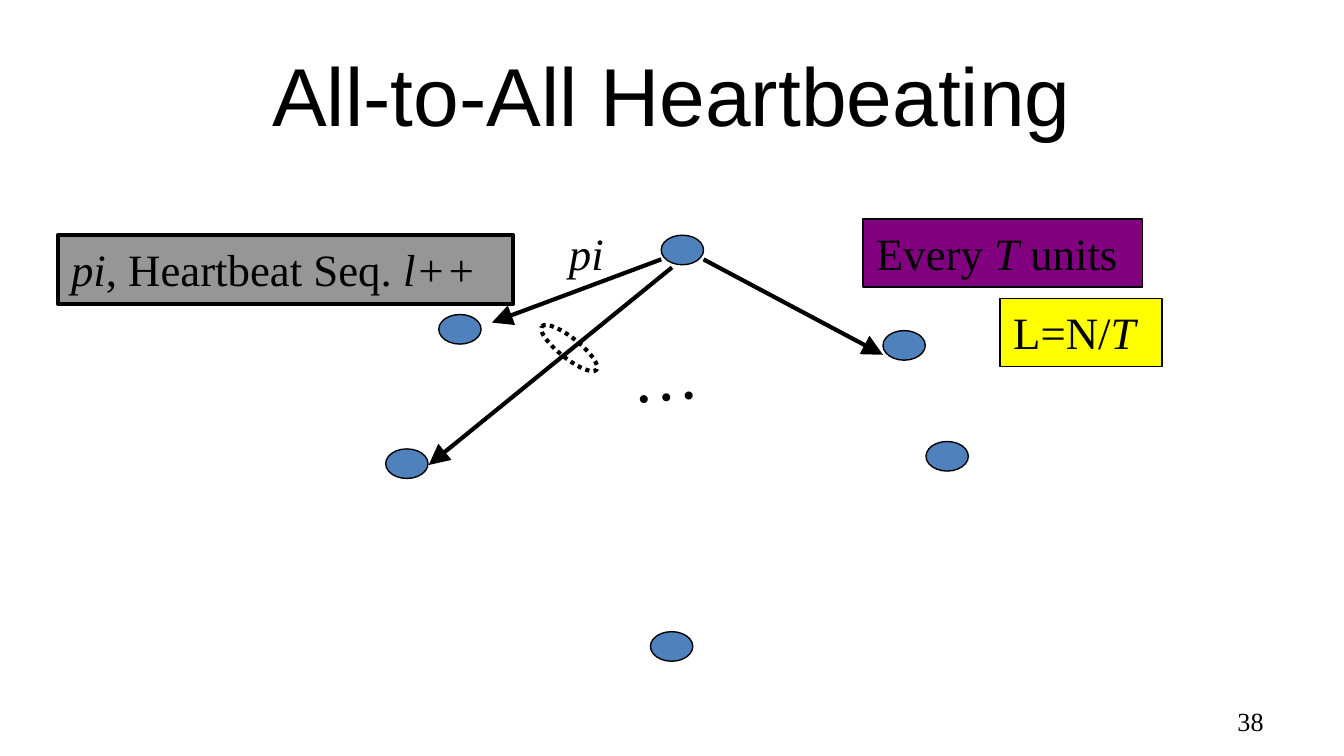
import pptx
import pptx.dml.color
import pptx.enum.dml
import pptx.enum.shapes
import pptx.enum.text
import pptx.oxml
import pptx.oxml.ns
import pptx.util

PX = 4572
SERIF = "Times New Roman"
ALIGN = pptx.enum.text.PP_ALIGN
ANCHOR = pptx.enum.text.MSO_ANCHOR
SHAPE = pptx.enum.shapes.MSO_SHAPE


def emu(*lengths):
    """Turn px lengths into EMU."""
    return [pptx.util.Emu(length * PX) for length in lengths]


def color(value):
    """Turn a hex string into a colour."""
    return pptx.dml.color.RGBColor.from_string(value)


def set_line(line, width):
    """Give a line or outline black ink and a width in points."""
    line.color.rgb = color("000000")
    line.width = pptx.util.Pt(width)


def set_font(para, name, size):
    """Set the black font of a paragraph."""
    para.font.name = name
    para.font.size = pptx.util.Pt(size)
    para.font.color.rgb = color("000000")


def add_ellipse(page, box, line_width, fill=None):
    """Add an outlined ellipse, hollow unless a fill is given."""
    ellipse = page.shapes.add_shape(SHAPE.OVAL, *emu(*box))
    ellipse.shadow.inherit = False
    if fill:
        ellipse.fill.solid()
        ellipse.fill.fore_color.rgb = color(fill)
    else:
        ellipse.fill.background()
    set_line(ellipse.line, line_width)
    return ellipse


def add_arrow(page, start, end):
    """Add an arrow that points at its end."""
    arrow = page.shapes.add_connector(
        pptx.enum.shapes.MSO_CONNECTOR.STRAIGHT, *emu(*start, *end))
    set_line(arrow.line, 2.25)
    namespace = pptx.oxml.ns.nsdecls("a")
    properties = arrow.element.spPr
    properties.find(pptx.oxml.ns.qn("a:ln")).append(pptx.oxml.parse_xml(
        f'<a:tailEnd {namespace} type="triangle" w="lg" len="lg"/>'))
    properties.append(pptx.oxml.parse_xml(f'<a:effectLst {namespace}/>'))


def add_label(page, box, spans, size=24, fill=None, line_width=0.75):
    """Add serif text from (text, italic) spans, framed if a fill is given."""
    if fill:
        label = page.shapes.add_shape(SHAPE.RECTANGLE, *emu(*box))
        label.shadow.inherit = False
        label.fill.solid()
        label.fill.fore_color.rgb = color(fill)
        set_line(label.line, line_width)
    else:
        label = page.shapes.add_textbox(*emu(*box))
    frame = label.text_frame
    frame.word_wrap = True
    frame.vertical_anchor = ANCHOR.TOP
    para = frame.paragraphs[0]
    para.alignment = ALIGN.LEFT
    set_font(para, SERIF, size)
    for text, italic in spans:
        span = para.add_run()
        span.text = text
        span.font.italic = italic
    return label


def build_title(page, box, text):
    """Place the title in its placeholder."""
    title = page.shapes.title
    title.left, title.top, title.width, title.height = emu(*box)
    title.text_frame.text = text
    title.text_frame.vertical_anchor = ANCHOR.MIDDLE
    para = title.text_frame.paragraphs[0]
    para.alignment = ALIGN.CENTER
    set_font(para, "Arial", 44)


def build_ring(page, box):
    """Draw the ring of processes and the heartbeats sent from the top one."""
    left, top, _, _ = box
    for x, y in [(740, 142), (79, 118), (0, 318), (804, 307), (410, 0), (394, 590)]:
        add_ellipse(page, (left + x, top + y, 63, 44), 0.75, "4F81BD")
    for start, end in [((426, 48), (64, 342)), ((410, 36), (158, 130)),
                       ((473, 36), (740, 178))]:
        add_arrow(page, (left + start[0], top + start[1]),
                  (left + end[0], top + end[1]))
    bundle = add_ellipse(page, (left + 221, top + 153, 104, 30), 2.25)
    bundle.line.dash_style = pptx.enum.dml.MSO_LINE.ROUND_DOT
    bundle.rotation = 38.5
    dots = add_label(page, (left + 346, top + 136, 142, 142), [("…", False)], 36)
    dots.rotation = 355.4
    add_label(page, (left + 253, top - 24, 122, 102), [("pi", True)])


def build_notes(page, box):
    """Place the message, period and load labels."""
    left, top, _, _ = box
    add_label(page, (left, top + 24, 678, 102),
              [("pi", True), (", Heartbeat Seq. ", False), ("l++", True)],
              fill="969696", line_width=2.25)
    add_label(page, (left + 1198, top, 416, 101),
              [("Every ", False), ("T", True), (" units", False)], fill="800080")
    add_label(page, (left + 1402, top + 118, 241, 101),
              [("L=N/", False), ("T", True)], fill="FFFF00")


def build_page_number(page, box, number):
    """Place the page number at the right of its box."""
    label = add_label(page, box, [(number, False)], 14)
    label.text_frame.vertical_anchor = ANCHOR.MIDDLE
    label.text_frame.paragraphs[0].alignment = ALIGN.RIGHT


def main():
    """Build and save the deck."""
    deck = pptx.Presentation()
    deck.slide_width, deck.slide_height = emu(2000, 1125)
    page = deck.slides.add_slide(deck.slide_layouts.get_by_name("Title Only"))
    build_page_number(page, (1433, 1043, 467, 60), "38")
    build_title(page, (100, 46, 1800, 188), "All-to-All Heartbeating")
    build_ring(page, (574, 350, 867, 634))
    build_notes(page, (86, 326, 1643, 219))
    deck.save("out.pptx")


if __name__ == "__main__":
    main()
